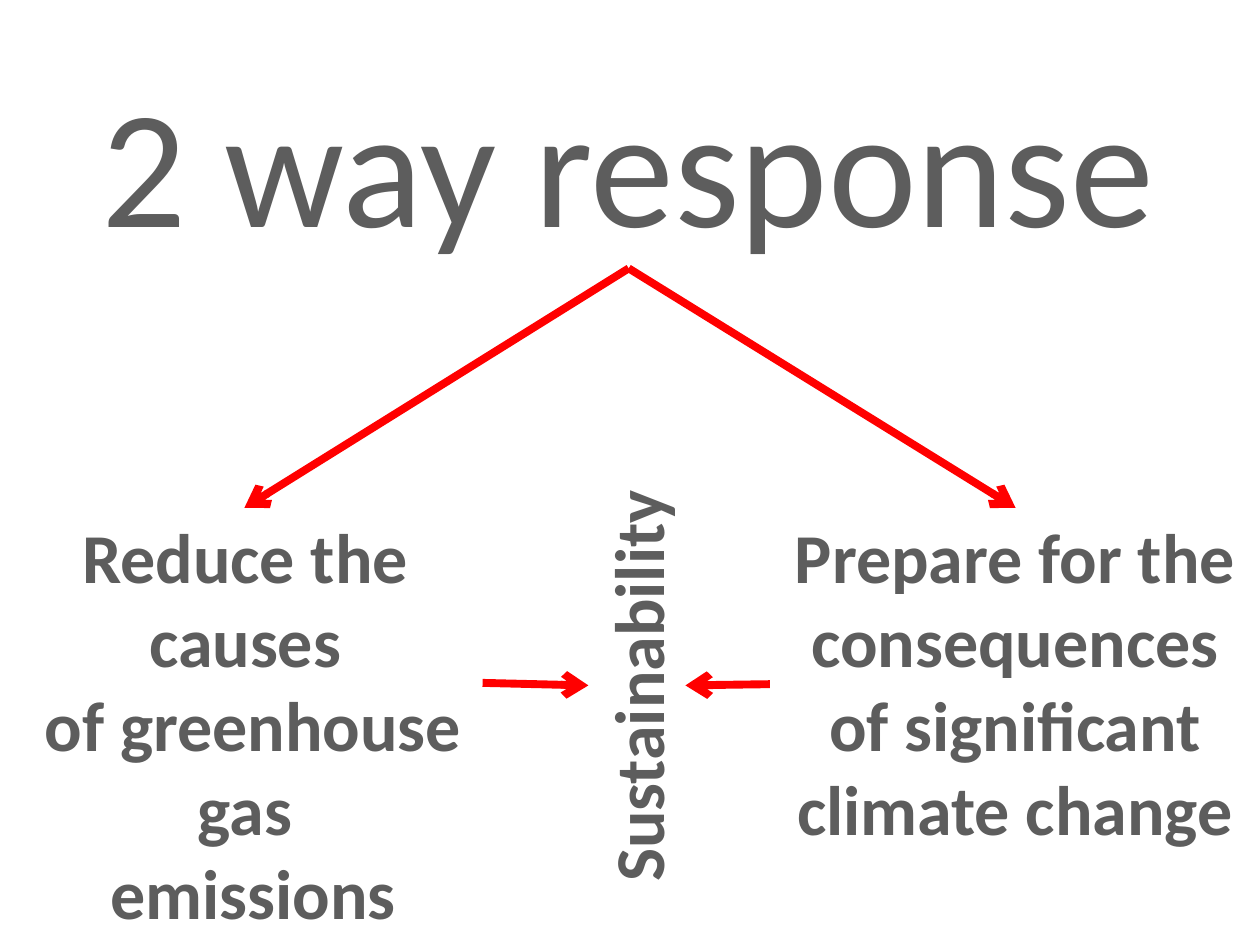
import dataclasses

import pptx
import pptx.dml.color
import pptx.enum.shapes
import pptx.enum.text
import pptx.oxml
import pptx.oxml.ns
import pptx.util

Inches = pptx.util.Inches
TOP, LEFT, BOTTOM = 0, 1, 2


@dataclasses.dataclass(frozen=True)
class Theme:
    """Colours, font and sizes of the slide."""
    font: str = "Calibri"
    text: str = "5D5D5D"
    arrow: str = "FF0000"
    title_size: int = 96
    body_size: int = 40
    arrow_width: float = 4.5


THEME = Theme()


def add_text(slide, box, lines, size, bold=True, rotation=0):
    """Place centred paragraphs in a box of left, top, width and height."""
    shape = slide.shapes.add_textbox(*map(Inches, box))
    shape.rotation = rotation
    frame = shape.text_frame
    frame.word_wrap = True
    frame.text = "\n".join(lines)
    for paragraph in frame.paragraphs:
        paragraph.alignment = pptx.enum.text.PP_ALIGN.CENTER
        font = paragraph.font
        font.name, font.size, font.bold = THEME.font, pptx.util.Pt(size), bold
        font.color.rgb = pptx.dml.color.RGBColor.from_string(THEME.text)
    return shape


def add_arrow(slide, start, end, source=None, target=None):
    """Draw an arrow, joined to (shape, side) pairs where they are given."""
    start, end = [tuple(map(Inches, point)) for point in (start, end)]
    arrow = slide.shapes.add_connector(
        pptx.enum.shapes.MSO_CONNECTOR.STRAIGHT, *start, *end)
    if source:
        arrow.begin_connect(*source)
    if target:
        arrow.end_connect(*target)
    arrow.begin_x, arrow.begin_y = start
    arrow.end_x, arrow.end_y = end
    arrow.line.color.rgb = pptx.dml.color.RGBColor.from_string(THEME.arrow)
    arrow.line.width = pptx.util.Pt(THEME.arrow_width)
    namespace = pptx.oxml.ns.nsdecls("a")
    arrow.line._get_or_add_ln().append(
        pptx.oxml.parse_xml(f'<a:tailEnd {namespace} type="arrow"/>'))
    arrow._element.spPr.append(pptx.oxml.parse_xml(f"<a:effectLst {namespace}/>"))


def add_responses(slide, title):
    """Place both responses and the shared goal, with the arrows between them."""
    reduce_causes = add_text(
        slide, (0, 4.03, 3.89, 3.47),
        ["Reduce the causes", " of greenhouse gas", " emissions"], THEME.body_size)
    prepare = add_text(
        slide, (6.11, 4.03, 3.89, 2.79),
        ["Prepare for the consequences of significant climate change"],
        THEME.body_size)
    goal = add_text(slide, (3.11, 5.06, 3.89, 0.77), ["Sustainability"],
                    THEME.body_size, rotation=270)
    for response, x in ((reduce_causes, 1.94), (prepare, 8.06)):
        add_arrow(slide, (4.99, 2.13), (x, 4.03), (title, BOTTOM), (response, TOP))
    add_arrow(slide, (6.11, 5.43), (5.44, 5.44), (prepare, LEFT), (goal, BOTTOM))
    add_arrow(slide, (3.83, 5.42), (4.67, 5.44), target=(goal, TOP))


def main():
    """Build and save the slide."""
    presentation = pptx.Presentation()
    presentation.slide_width, presentation.slide_height = Inches(10), Inches(7.5)
    slide = presentation.slides.add_slide(presentation.slide_layouts[6])
    title = add_text(slide, (0, 0.42, 9.97, 1.72), ["2 way response"],
                     THEME.title_size, bold=False)
    add_responses(slide, title)
    presentation.save("out.pptx")


if __name__ == "__main__":
    main()
